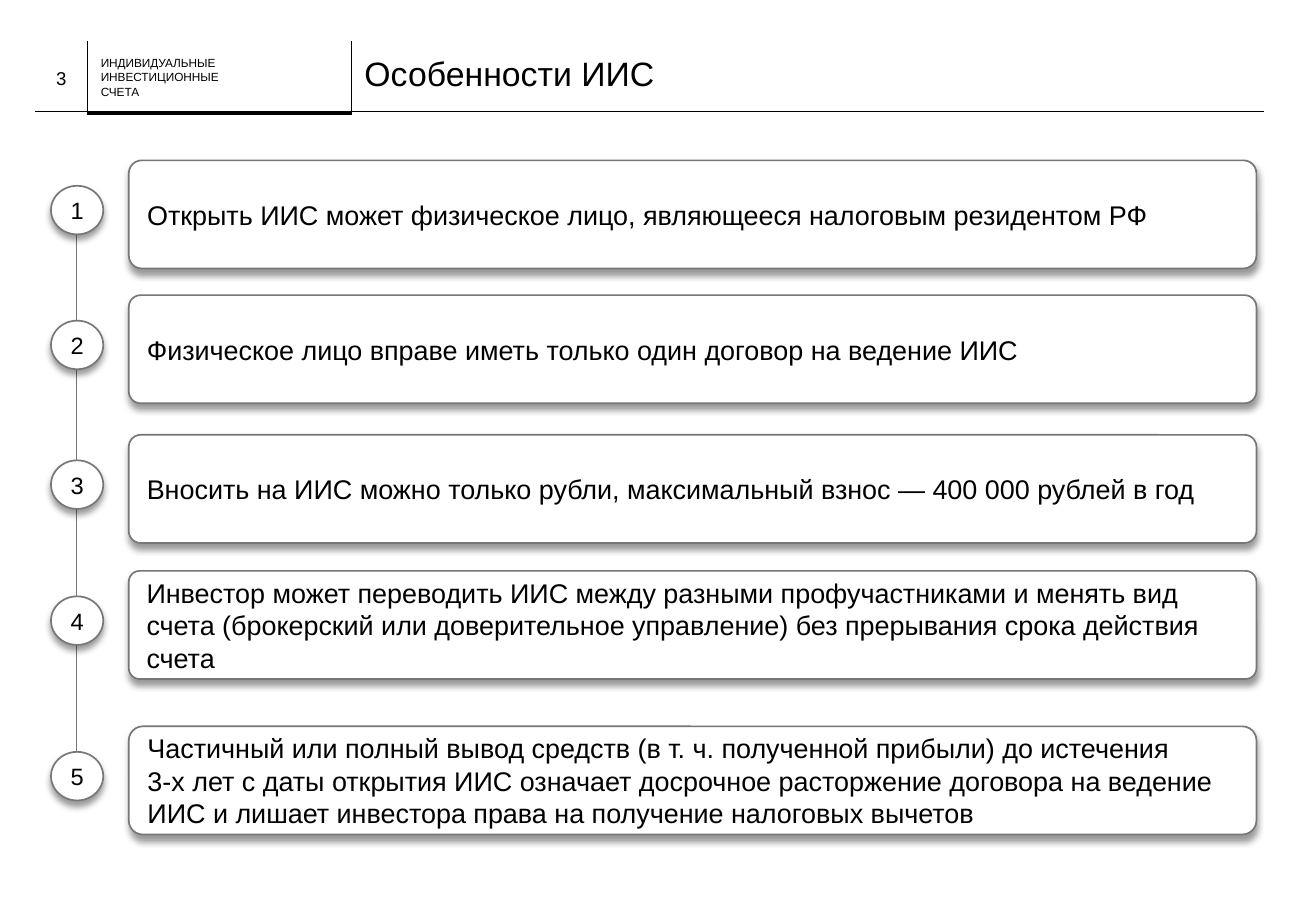
from copy import deepcopy

from lxml import etree
from pptx import Presentation, util as u
from pptx.dml.color import RGBColor
from pptx.enum import shapes, text
from pptx.oxml.ns import qn

PX = 9144  # 100 px to the inch
COLORS = {"ink": "000000", "paper": "FFFFFF", "outline": "77777A"}
FONT = "Arial"

TITLE = "Особенности ИИС"
SECTION = "ИНДИВИДУАЛЬНЫЕ\nИНВЕСТИЦИОННЫЕ\nСЧЕТА"
PAGE = "3"
# card top, corner radius, text
FEATURES = [
    (132, 0.12, "Открыть ИИС может физическое лицо, являющееся налоговым резидентом РФ"),
    (243, 0.11, "Физическое лицо вправе иметь только один договор на ведение ИИС"),
    (358, 0.11, "Вносить на ИИС можно только рубли, максимальный взнос — 400 000 рублей в год"),
    (470, 0.1, "Инвестор может переводить ИИС между разными профучастниками и менять вид "
               "счета (брокерский или доверительное управление) без прерывания срока действия счета"),
    (598, 0.13, "Частичный или полный вывод средств (в т. ч. полученной прибыли) до истечения\n"
                "3-х лет с даты открытия ИИС означает досрочное расторжение договора на ведение "
                "ИИС и лишает инвестора права на получение налоговых вычетов"),
]
# x1, y1, x2, y2, width in points
HEADER_RULES = [
    (72, 92, 29, 92, 0.25),
    (290, 93, 72, 93, 2.25),
    (1040, 92, 288, 92, 0.25),
    (72, 93, 72, 34, 0.25),
    (289, 93, 289, 34, 0.25),
]
CARD_X, CARD_W, CARD_H = 106, 928, 89
BADGE_X, BADGE_W, BADGE_H, BADGE_DROP = 42, 43, 40, 21

prs = Presentation()
prs.slide_width, prs.slide_height = 1083 * PX, 750 * PX
s = prs.slides.add_slide(prs.slide_layouts[6])


def px(*lengths):
    return [n * PX for n in lengths]


def rgb(name):
    return RGBColor.from_string(COLORS[name])


def write(sp, words, size, align=text.PP_ALIGN.LEFT, left=0, right=0, before=0, spacing=1.0):
    tf = sp.text_frame
    tf.word_wrap = True
    tf.vertical_anchor = text.MSO_ANCHOR.MIDDLE
    tf.margin_left, tf.margin_right = px(left, right)
    tf.margin_top = tf.margin_bottom = 0
    p = tf.paragraphs[0]
    p.text = words
    p.alignment, p.line_spacing, p.space_before = align, spacing, u.Pt(before)
    for r in p.runs:
        r.font.name, r.font.size = FONT, u.Pt(size)
        r.font.color.rgb = rgb("ink")
    # a line break takes the size of the text around it
    for br in p._p.findall(qn("a:br")):
        br.append(deepcopy(p.runs[0]._r.rPr))


def label(box, words, size, **style):
    write(s.shapes.add_textbox(*px(*box)), words, size, **style)


def rule(x1, y1, x2, y2, width, color="ink"):
    line = s.shapes.add_connector(shapes.MSO_CONNECTOR.STRAIGHT, *px(x1, y1, x2, y2))
    line.line.color.rgb, line.line.width = rgb(color), u.Pt(width)
    etree.SubElement(line._element.spPr, qn("a:effectLst"))


def raised(kind, box):
    """Add a white outlined shape with a soft shadow below it."""
    sp = s.shapes.add_shape(kind, *px(*box))
    sp.fill.solid()
    sp.fill.fore_color.rgb = rgb("paper")
    sp.line.color.rgb, sp.line.width = rgb("outline"), u.Pt(1)
    sp.shadow.inherit = False
    shadow = etree.SubElement(
        sp._element.spPr.find(qn("a:effectLst")), qn("a:outerShdw"),
        blurRad=str(u.Pt(4)), dist=str(u.Pt(3)), dir="5400000", rotWithShape="0")
    tint = etree.SubElement(shadow, qn("a:srgbClr"), val=COLORS["ink"])
    etree.SubElement(tint, qn("a:alpha"), val="40000")
    return sp


for header_rule in HEADER_RULES:
    rule(*header_rule)
label((83, 46, 203, 35), SECTION, 7)
label((300, 34, 677, 56), TITLE, 20, spacing=0.9)
label((29, 44, 43, 40), PAGE, 11, align=text.PP_ALIGN.CENTER)

spine_x = BADGE_X + BADGE_W // 2
rule(spine_x, FEATURES[0][0] + BADGE_DROP,
     spine_x, FEATURES[-1][0] + BADGE_DROP + BADGE_H, 1, "outline")

for number, (top, radius, words) in enumerate(FEATURES, 1):
    badge = raised(shapes.MSO_SHAPE.OVAL, (BADGE_X, top + BADGE_DROP, BADGE_W, BADGE_H))
    write(badge, str(number), 14, align=text.PP_ALIGN.CENTER, left=8, right=8, before=5)
    card = raised(shapes.MSO_SHAPE.ROUNDED_RECTANGLE, (CARD_X, top, CARD_W, CARD_H))
    card.adjustments[0] = radius
    write(card, words, 16, left=12, right=8)

prs.save("out.pptx")
